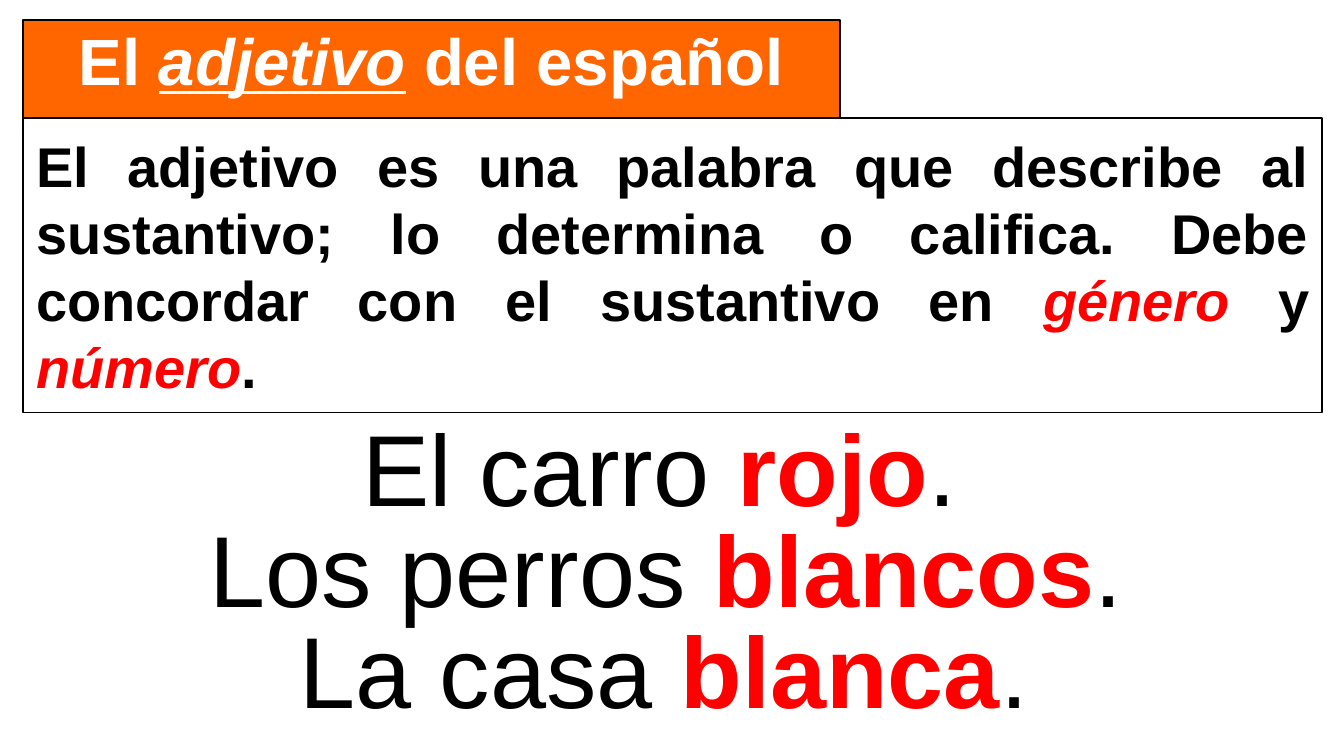
from pptx import Presentation
from pptx import util as u
from pptx.dml.color import RGBColor
from pptx.enum import shapes, text

THEME = {
    "font": "Arial",
    "white": RGBColor.from_string("FFFFFF"),
    "black": RGBColor.from_string("000000"),
    "red": RGBColor.from_string("FF0000"),
    "orange": RGBColor.from_string("FF6600"),
    "title": 35,
    "body": 30,
    "example": 54,
}

# Each piece of text is (wording, emphasised)
TITLE = [("El ", False), ("adjetivo", True), (" del español", False)]
DEFINITION = [
    ("El adjetivo es una palabra que describe al sustantivo; lo determina "
     "o califica. Debe concordar con el sustantivo en ", False),
    ("género ", True), ("y ", False), ("número", True), (". ", False),
]
# Start of sentence, adjective, left, width
EXAMPLES = [
    ("El carro ", "rojo", 1.66, 6.49),
    ("Los perros ", "blancos", 0.33, 9.25),
    ("La casa ", "blanca", 1.0, 7.88),
]
SLIDE_WIDTH = 10
SLIDE_HEIGHT = SLIDE_WIDTH * 9 / 16
EXAMPLE_TOP, EXAMPLE_STEP, EXAMPLE_HEIGHT = 2.97, 0.75, 1.01
EDGE, TITLE_TOP, TITLE_HEIGHT = 0.17, 0.15, 0.73


def write(box, pieces, size, align, base, strong, anchor=text.MSO_ANCHOR.TOP,
          top=0.05, before=0):
    """Fill a box; base and strong hold the format of plain and emphasised text."""
    frame = box.text_frame
    frame.word_wrap = True
    frame.vertical_anchor = anchor
    frame.margin_top = u.Inches(top)
    para = frame.paragraphs[0]
    para.alignment = align
    para.space_before = u.Pt(before)
    for wording, emphasised in pieces:
        look = {**base, **(strong if emphasised else {})}
        span = para.add_run()
        span.text = wording
        span.font.name = THEME["font"]
        span.font.size = u.Pt(size)
        span.font.color.rgb = look["color"]
        span.font.bold = look.get("bold", False)
        span.font.italic = look.get("italic", False)
        span.font.underline = look.get("underline", False)


def add_panel(page, left, top, width, height, fill=None):
    panel = page.shapes.add_shape(
        shapes.MSO_SHAPE.RECTANGLE, *map(u.Inches, (left, top, width, height)))
    panel.shadow.inherit = False
    if fill is None:
        panel.fill.background()
    else:
        panel.fill.solid()
        panel.fill.fore_color.rgb = fill
    panel.line.color.rgb = THEME["black"]
    panel.line.width = u.Pt(1)
    return panel


def main():
    deck = Presentation()
    deck.slide_width, deck.slide_height = u.Inches(SLIDE_WIDTH), u.Inches(SLIDE_HEIGHT)
    page = deck.slides.add_slide(deck.slide_layouts[6])

    for row, (start, adjective, left, width) in enumerate(EXAMPLES):
        box = page.shapes.add_textbox(
            u.Inches(left), u.Inches(EXAMPLE_TOP + row * EXAMPLE_STEP),
            u.Inches(width), u.Inches(EXAMPLE_HEIGHT))
        write(box, [(start, False), (adjective, True), (".", False)],
              THEME["example"], text.PP_ALIGN.CENTER, {"color": THEME["black"]},
              {"color": THEME["red"], "bold": True}, before=5)

    title = add_panel(page, EDGE, TITLE_TOP, 6.08, TITLE_HEIGHT, THEME["orange"])
    write(title, TITLE, THEME["title"], text.PP_ALIGN.CENTER,
          {"color": THEME["white"], "bold": True},
          {"italic": True, "underline": True}, top=0)

    definition = add_panel(page, EDGE, TITLE_TOP + TITLE_HEIGHT, 9.67, 2.19)
    write(definition, DEFINITION, THEME["body"], text.PP_ALIGN.JUSTIFY,
          {"color": THEME["black"], "bold": True},
          {"color": THEME["red"], "italic": True}, text.MSO_ANCHOR.MIDDLE)

    deck.save("out.pptx")


if __name__ == "__main__":
    main()
